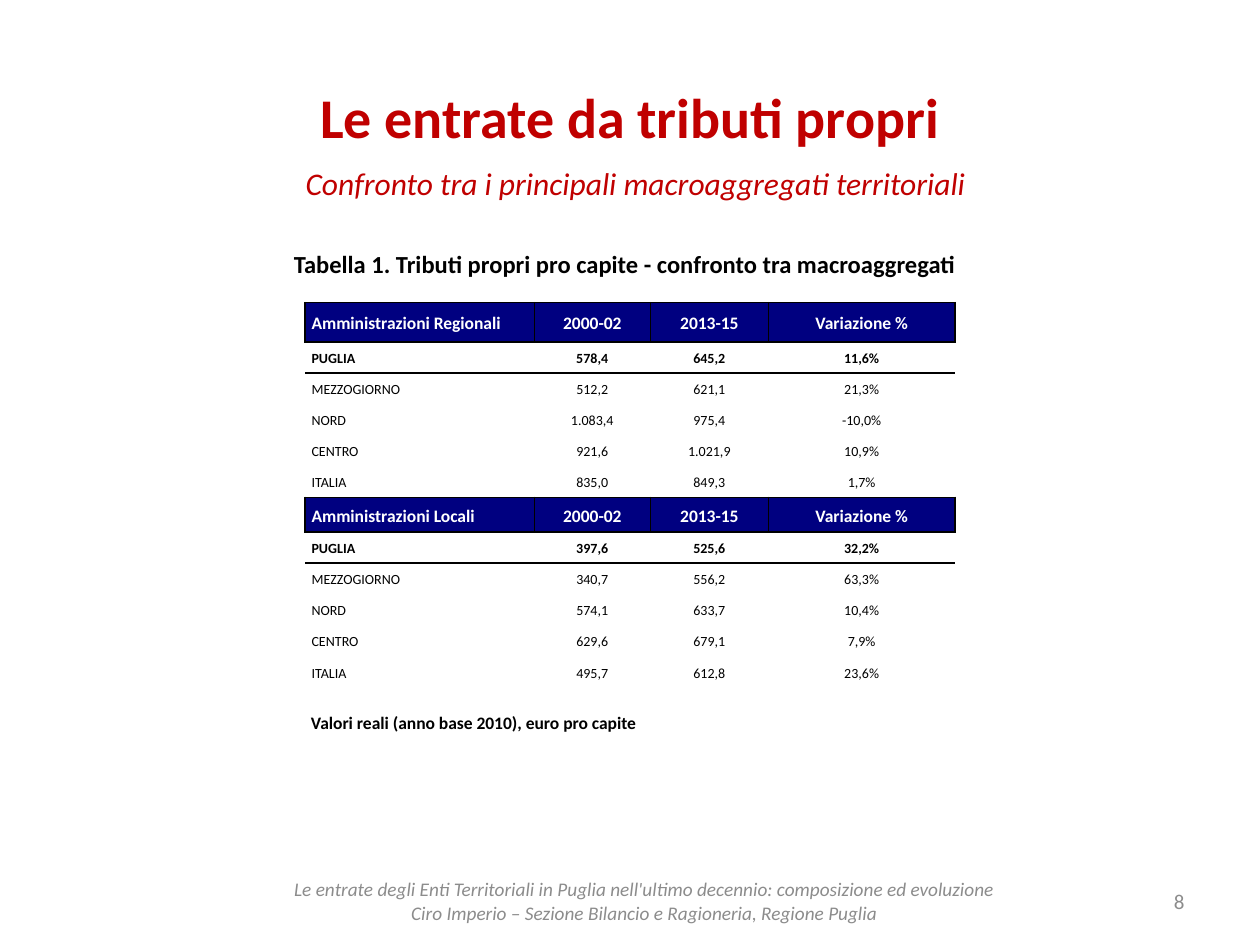
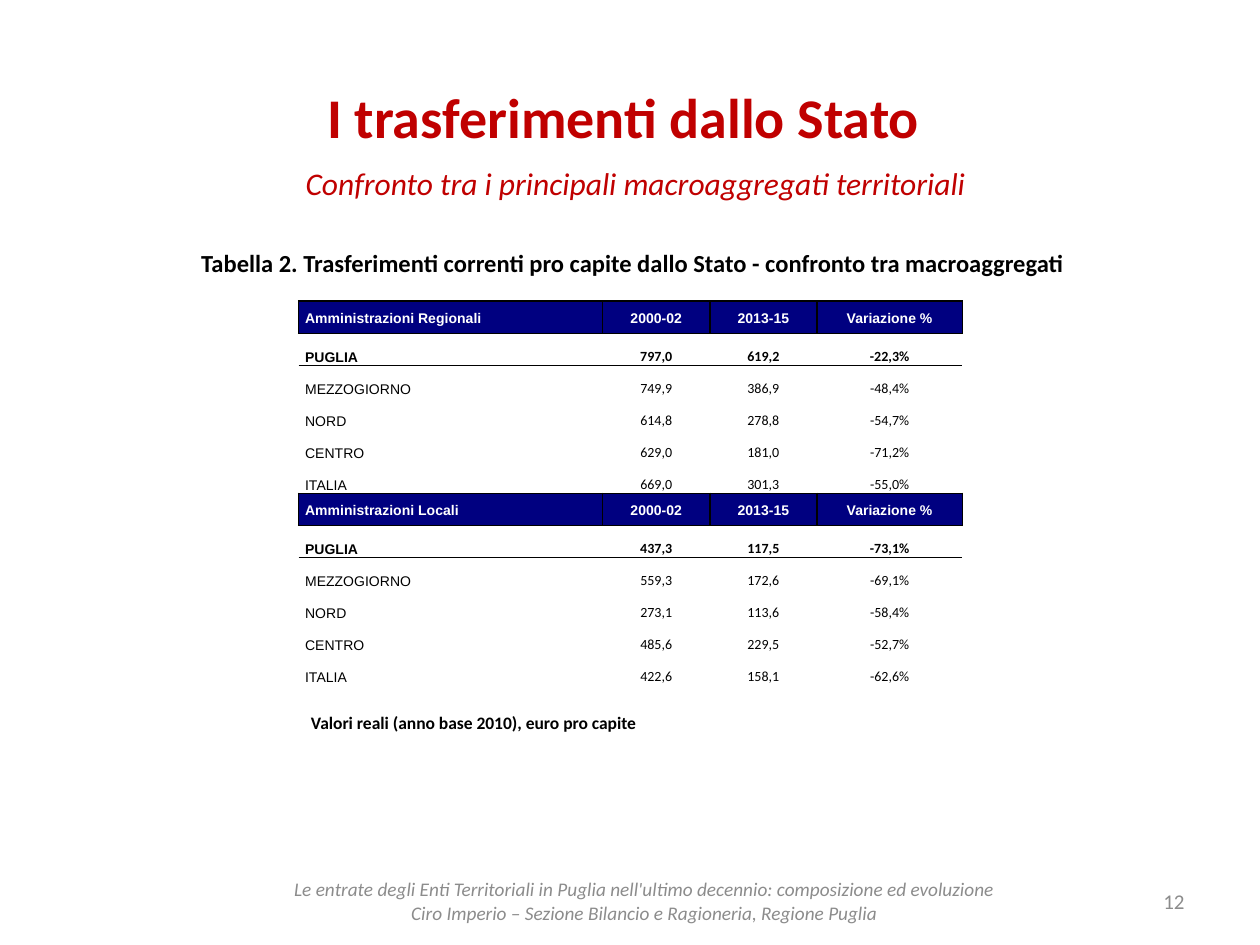
from lxml import etree
from pptx import Presentation
from pptx.dml.color import RGBColor
from pptx.enum import text
from pptx.oxml.ns import qn
from pptx.util import Cm, Pt

RED = RGBColor(0xC0, 0x00, 0x00)
NAVY = RGBColor(0x00, 0x00, 0x80)
GREY = RGBColor(0x8C, 0x8C, 0x8C)
BLACK = RGBColor(0x00, 0x00, 0x00)
WHITE = RGBColor(0xFF, 0xFF, 0xFF)

FONT = "Calibri"
PLAIN = "{2D5ABB26-0587-4C30-8999-92F81FD0307C}"  # table style without grid
LEFT, MID, RIGHT = text.PP_ALIGN.LEFT, text.PP_ALIGN.CENTER, text.PP_ALIGN.RIGHT
TOP, CENTRE, BASE = (text.MSO_ANCHOR.TOP, text.MSO_ANCHOR.MIDDLE,
                     text.MSO_ANCHOR.BOTTOM)

SUB = "Confronto tra i principali macroaggregati territoriali"
NOTE = "Valori reali (anno base 2010), euro pro capite"
FOOT = ("Le entrate degli Enti Territoriali in Puglia nell'ultimo decennio: "
        "composizione ed evoluzione\n"
        "Ciro Imperio – Sezione Bilancio e Ragioneria, Regione Puglia")
YEARS = ["2000-02", "2013-15", "Variazione %"]
AREAS = ["PUGLIA", "MEZZOGIORNO", "NORD", "CENTRO", "ITALIA"]
GROUPS = ["Amministrazioni Regionali", "Amministrazioni Locali"]

# Values per group, one row per area
TAXES = [
    ["578,4 645,2 11,6%", "512,2 621,1 21,3%", "1.083,4 975,4 -10,0%",
     "921,6 1.021,9 10,9%", "835,0 849,3 1,7%"],
    ["397,6 525,6 32,2%", "340,7 556,2 63,3%", "574,1 633,7 10,4%",
     "629,6 679,1 7,9%", "495,7 612,8 23,6%"],
]
GRANTS = [
    ["797,0 619,2 -22,3%", "749,9 386,9 -48,4%", "614,8 278,8 -54,7%",
     "629,0 181,0 -71,2%", "669,0 301,3 -55,0%"],
    ["437,3 117,5 -73,1%", "559,3 172,6 -69,1%", "273,1 113,6 -58,4%",
     "485,6 229,5 -52,7%", "422,6 158,1 -62,6%"],
]


class Deck:
    def __init__(self):
        self.prs = Presentation()
        self.prs.slide_width, self.prs.slide_height = Cm(25.4), Cm(19.05)
        self.slide = None

    def style(self, frame, size, color, align, bold=False, italic=False, font=FONT):
        for para in frame.paragraphs:
            para.alignment = align
            for run in para.runs:
                face = run.font
                face.name, face.size = font, Pt(size)
                face.bold, face.italic = bold, italic
                face.color.rgb = color

    def label(self, words, box, size, color, align=MID, anchor=TOP, wrap=True, **look):
        shape = self.slide.shapes.add_textbox(*map(Cm, box))
        frame = shape.text_frame
        frame.text = words
        frame.word_wrap = wrap
        frame.vertical_anchor = anchor
        self.style(frame, size, color, align, **look)

    def page(self, title, number):
        """Start a slide with the title, subtitle, note and footer."""
        self.slide = self.prs.slides.add_slide(self.prs.slide_layouts[6])
        self.label(title, (1.27, 0.76, 22.86, 3.18), 32, RED, anchor=CENTRE, bold=True)
        self.label(SUB, (2.59, 3.18, 20.45, 1.02), 18, RED, italic=True)
        self.label(NOTE, (6.02, 14.22, 7.21, 0.69), 10, BLACK, LEFT,
                   wrap=False, bold=True)
        self.label(FOOT, (3.18, 17.65, 19.63, 1.02), 11, GREY, anchor=CENTRE,
                   italic=True)
        self.label(number, (18.21, 17.65, 5.92, 1.02), 12, GREY, RIGHT, CENTRE)

    def caption(self, words, left, top):
        self.label(words, (left, top, 20.83, 0.86), 14, BLACK, bold=True)

    def border(self, cell, sides):
        props = cell._tc.get_or_add_tcPr()
        for side in sides:
            line = etree.SubElement(props, qn(f"a:ln{side}"), w=str(Pt(1)))
            fill = etree.SubElement(line, qn("a:solidFill"))
            etree.SubElement(fill, qn("a:srgbClr"), val=str(BLACK))

    def cell(self, cell, words, head, sides, anchor, align, **look):
        cell.text = words
        cell.margin_left = cell.margin_right = Cm(0.13)
        cell.margin_top = cell.margin_bottom = 0
        cell.vertical_anchor = anchor
        self.border(cell, sides)
        if head:
            cell.fill.solid()
            cell.fill.fore_color.rgb = NAVY
        else:
            cell.fill.background()
        cell.text_frame.paragraphs[0].line_spacing = 1.15
        self.style(cell.text_frame, color=WHITE if head else BLACK,
                   align=align, **look)

    def table(self, data, left, top, cols, height, heads, size, font, anchor):
        """Two stacked groups, each a header band and one row per area."""
        step = len(AREAS) + 1
        count = step * len(GROUPS)
        body = (height - sum(heads)) / (count - len(heads))
        frame = self.slide.shapes.add_table(
            count, len(cols), Cm(left), Cm(top), Cm(sum(cols)), Cm(height))
        grid = frame.table
        grid.first_row = grid.horz_banding = False
        frame.element.find(".//" + qn("a:tableStyleId")).text = PLAIN
        for col, width in zip(grid.columns, cols):
            col.width = Cm(width)

        rows = []
        for group, values in zip(GROUPS, data):
            rows.append([group] + YEARS)
            rows += [[area] + line.split() for area, line in zip(AREAS, values)]

        for r, row in enumerate(rows):
            part, pos = divmod(r, step)
            head = pos == 0
            grid.rows[r].height = Cm(heads[part] if head else body)
            # Body rows share a line with the header band they touch
            last = pos == step - 1 and r < count - 1
            sides = "LRTB" if head else "T" if pos == 1 else "B" if last else ""
            for c, words in enumerate(row):
                self.cell(grid.cell(r, c), words, head, sides,
                          CENTRE if head else anchor, MID if c else LEFT,
                          size=size if head else 8, bold=pos < 2,
                          font=font if head or c == 0 else FONT)


def main():
    deck = Deck()

    # Own taxes
    deck.page("Le entrate da tributi propri", "8")
    deck.table(TAXES, 6.15, 6.1, (4.62, 2.34, 2.38, 3.76), 7.77,
               (0.79, 0.7), 10, FONT, CENTRE)
    deck.caption("Tabella 1. Tributi propri pro capite - confronto tra "
                 "macroaggregati", 2.18, 4.9)

    # State transfers
    deck.page("I trasferimenti dallo Stato ", "12")
    deck.table(GRANTS, 6.02, 6.07, (6.13, 2.16, 2.16, 2.93), 7.75,
               (0.65, 0.65), 8, "Arial", BASE)
    deck.caption("Tabella 2. Trasferimenti correnti pro capite dallo Stato - "
                 "confronto tra macroaggregati", 2.34, 4.88)

    deck.prs.save("out.pptx")


if __name__ == "__main__":
    main()
